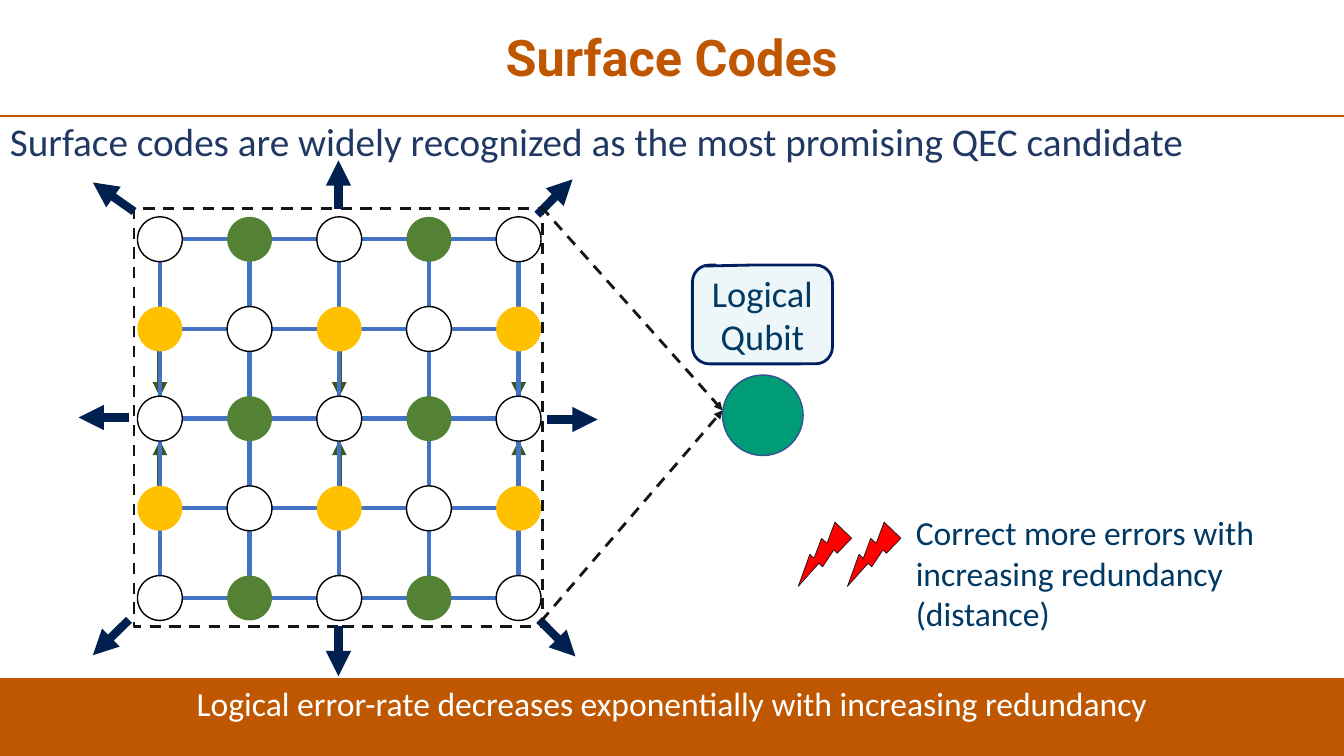
from dataclasses import dataclass
from itertools import product
from typing import Optional

from lxml.etree import SubElement
from pptx import Presentation
from pptx.dml.color import RGBColor
from pptx.enum.dml import MSO_LINE
from pptx.enum.shapes import MSO_CONNECTOR, MSO_SHAPE as Preset
from pptx.enum.text import MSO_ANCHOR as Anchor, MSO_AUTO_SIZE, PP_ALIGN as Align
from pptx.oxml.ns import qn
from pptx.util import Cm, Pt

ORANGE = RGBColor(0xBF, 0x57, 0x00)
WHITE = RGBColor(0xFF, 0xFF, 0xFF)
BLACK = RGBColor(0x00, 0x00, 0x00)
INK = RGBColor(0x15, 0x15, 0x15)
NAVY = RGBColor(0x00, 0x20, 0x50)
CALLOUT_EDGE = RGBColor(0x00, 0x20, 0x60)
CALLOUT_FILL = RGBColor(0xED, 0xF6, 0xF9)
LABEL_BLUE = RGBColor(0x00, 0x39, 0x63)
CLAIM_BLUE = RGBColor(0x20, 0x38, 0x64)
LATTICE_BLUE = RGBColor(0x44, 0x72, 0xC4)
GREEN = RGBColor(0x54, 0x82, 0x35)
DARK_GREEN = RGBColor(0x38, 0x57, 0x23)
YELLOW = RGBColor(0xFF, 0xC0, 0x00)
TEAL = RGBColor(0x00, 0x9B, 0x77)
TEAL_EDGE = RGBColor(0x32, 0x54, 0x91)
RED = RGBColor(0xFF, 0x00, 0x00)
BOLT_EDGE = RGBColor(0x18, 0x17, 0x17)

# Lattice geometry in cm
LEFT, TOP, PITCH, QUBIT = 4.03, 6.03, 2.26, 1.13
SIZE = 5


@dataclass(frozen=True)
class Line:
    x1: float
    y1: float
    x2: float
    y2: float
    color: RGBColor
    weight: float
    dashed: bool = False
    arrow: bool = True
    frame_side: Optional[int] = None


@dataclass(frozen=True)
class Figure:
    preset: Preset
    x: float
    y: float
    width: float
    height: float
    fill: Optional[RGBColor] = None
    edge: Optional[RGBColor] = None
    weight: float = 1
    dashed: bool = False
    rotation: float = 0


def draw_figure(slide, figure: Figure):
    shape = slide.shapes.add_shape(figure.preset, Cm(figure.x), Cm(figure.y),
                                   Cm(figure.width), Cm(figure.height))
    shape.shadow.inherit = False
    shape.rotation = figure.rotation
    if figure.fill is None:
        shape.fill.background()
    else:
        shape.fill.solid()
        shape.fill.fore_color.rgb = figure.fill
    if figure.edge is None:
        shape.line.fill.background()
    else:
        shape.line.color.rgb = figure.edge
        shape.line.width = Pt(figure.weight)
        if figure.dashed:
            shape.line.dash_style = MSO_LINE.DASH
    return shape


def draw_line(slide, line: Line, frame=None):
    connector = slide.shapes.add_connector(MSO_CONNECTOR.STRAIGHT, Cm(line.x1), Cm(line.y1),
                                           Cm(line.x2), Cm(line.y2))
    if frame is not None and line.frame_side is not None:
        connector.begin_connect(frame, line.frame_side)
    connector.line.color.rgb = line.color
    connector.line.width = Pt(line.weight)
    if line.dashed:
        connector.line.dash_style = MSO_LINE.DASH
    if line.arrow:
        SubElement(connector.line._get_or_add_ln(), qn("a:tailEnd"), type="triangle")
    SubElement(connector._element.spPr, qn("a:effectLst"))
    return connector


def write(shape, *paragraphs: str, size: float, color: RGBColor, font: str = "Calibri",
          bold: bool = False, align: Align = Align.LEFT, anchor: Anchor = Anchor.TOP,
          spacing: float = 1.0) -> None:
    frame = shape.text_frame
    frame.word_wrap = True
    frame.auto_size = MSO_AUTO_SIZE.NONE
    frame.vertical_anchor = anchor
    for index, text in enumerate(paragraphs):
        paragraph = frame.add_paragraph() if index else frame.paragraphs[0]
        paragraph.text = text
        paragraph.alignment = align
        paragraph.line_spacing = spacing
        paragraph.font.name = font
        paragraph.font.size = Pt(size)
        paragraph.font.bold = bold
        paragraph.font.color.rgb = color


def add_text_box(slide, x: float, y: float, width: float, height: float):
    return slide.shapes.add_textbox(Cm(x), Cm(y), Cm(width), Cm(height))


def qubit_color(row: int, column: int) -> RGBColor:
    if row % 2 == column % 2:
        return WHITE
    return YELLOW if row % 2 else GREEN


def draw_lattice(slide) -> None:
    # Arrows from the yellow qubits towards the middle row
    middle = TOP + 2 * PITCH
    for column, direction in product(range(0, SIZE, 2), (-1, 1)):
        x = LEFT + column * PITCH
        draw_line(slide, Line(x, middle + direction * 1.7, x, middle + direction * 0.55,
                              DARK_GREEN, 3.5))
    # Square cells
    for row, column in product(range(SIZE - 1), repeat=2):
        draw_figure(slide, Figure(Preset.RECTANGLE, LEFT + column * PITCH, TOP + row * PITCH,
                                  PITCH, PITCH, edge=LATTICE_BLUE, weight=3))
    # Qubits on the corners
    for row, column in product(range(SIZE), repeat=2):
        color = qubit_color(row, column)
        draw_figure(slide, Figure(Preset.FLOWCHART_CONNECTOR,
                                  LEFT + column * PITCH - QUBIT / 2,
                                  TOP + row * PITCH - QUBIT / 2, QUBIT, QUBIT,
                                  fill=color, edge=BLACK if color == WHITE else None))


def draw_growth_arrows(slide, patch) -> None:
    for x1, y1, x2, y2, side in (
        (13.79, 10.57, 15.06, 10.57, None),
        (8.53, 15.78, 8.53, 17.04, 2),
        (3.25, 10.52, 1.98, 10.52, None),
        (8.53, 5.26, 8.53, 4.04, 0),
        (13.59, 15.62, 14.5, 16.54, None),
        (3.25, 15.62, 2.34, 16.51, None),
        (13.54, 5.41, 14.43, 4.52, None),
        (3.38, 5.33, 2.34, 4.6, None),
    ):
        draw_line(slide, Line(x1, y1, x2, y2, NAVY, 6, frame_side=side), patch)


def main() -> None:
    deck = Presentation()
    deck.slide_width, deck.slide_height = Cm(33.87), Cm(19.05)
    slide = deck.slides.add_slide(deck.slide_layouts[5])

    # Title, rule and claim
    title = slide.shapes.title
    title.left, title.top, title.width, title.height = Cm(0.23), Cm(0.1), Cm(33.4), Cm(2.82)
    write(title, "Surface Codes", size=36, color=ORANGE, font="Roboto", bold=True,
          align=Align.CENTER, anchor=Anchor.MIDDLE, spacing=0.9)
    draw_line(slide, Line(0, 2.92, 33.87, 2.92, ORANGE, 1.5, arrow=False))
    claim = add_text_box(slide, 0, 2.82, 33.87, 1.45)
    write(claim, "Surface codes are widely recognized as the most promising QEC candidate",
          size=28, color=CLAIM_BLUE)

    # Conclusion band
    band = draw_figure(slide, Figure(Preset.RECTANGLE, 0, 17.09, 33.87, 2.03, fill=ORANGE))
    write(band, "Logical error-rate decreases exponentially with increasing redundancy",
          size=24, color=WHITE, align=Align.CENTER)

    # Code patch
    draw_lattice(slide)
    patch = draw_figure(slide, Figure(Preset.RECTANGLE, 3.38, 5.26, 10.3, 10.52,
                                      edge=INK, weight=2, dashed=True))
    draw_growth_arrows(slide, patch)

    # Logical qubit
    for corner_y in (5.21, 15.65):
        draw_line(slide, Line(13.64, corner_y, 18.21, 10.34, INK, 2, dashed=True))
    draw_figure(slide, Figure(Preset.OVAL, 18.21, 9.45, 2.03, 2.03, fill=TEAL, edge=TEAL_EDGE))
    callout = draw_figure(slide, Figure(Preset.ROUNDED_RECTANGULAR_CALLOUT, 17.45, 6.68, 3.53,
                                        2.49, fill=CALLOUT_FILL, edge=CALLOUT_EDGE, weight=2))
    for index, value in enumerate((-0.41, -0.49, 0.17)):
        callout.adjustments[index] = value
    write(callout, "Logical Qubit", size=26, color=LABEL_BLUE, align=Align.CENTER,
          anchor=Anchor.MIDDLE)

    # Error correction note
    for bolt_x in (20.07, 21.31):
        draw_figure(slide, Figure(Preset.LIGHTNING_BOLT, bolt_x, 13.11, 1.3, 1.63, fill=RED,
                                  edge=BOLT_EDGE, weight=0.5, rotation=73.9))
    note = add_text_box(slide, 22.83, 12.78, 9.07, 3.33)
    write(note, "Correct more errors with increasing redundancy", "(distance)",
          size=24, color=LABEL_BLUE)

    deck.save("out.pptx")


if __name__ == "__main__":
    main()
